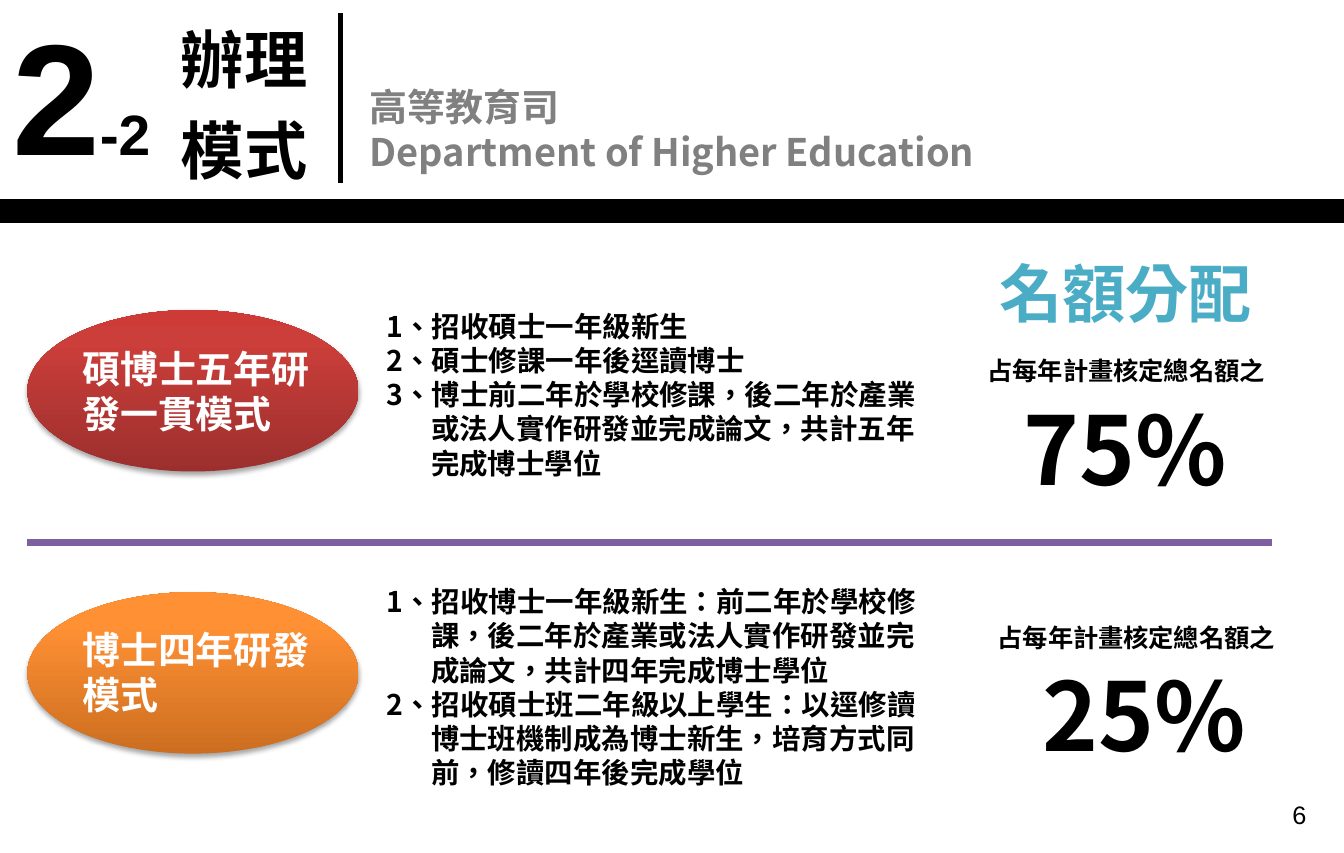
"""Build the slide on programme modes and their quota shares."""

import dataclasses
import typing

import lxml.etree
import pptx
import pptx.dml.color
import pptx.enum.shapes
import pptx.enum.text
import pptx.oxml.ns
import pptx.util

Pt = pptx.util.Pt
qn = pptx.oxml.ns.qn
ALIGN = pptx.enum.text.PP_ALIGN
SLIDE_WIDTH = 850.39
SLIDE_HEIGHT = 540


@dataclasses.dataclass(frozen=True)
class Theme:
    latin: str = "Arial"
    chinese: str = "Noto Sans CJK SC"
    black: str = "000000"
    white: str = "FFFFFF"
    grey: str = "808080"
    accent: str = "4BACC6"
    divider: str = "7D60A0"
    numeral: float = 100
    percent: float = 60
    heading: float = 40
    section: float = 36
    caption: float = 24
    body: float = 18
    small: float = 16
    line_height: float = 1.2


THEME = Theme()


@dataclasses.dataclass(frozen=True)
class Box:
    left: float
    top: float
    width: float
    height: float

    def lengths(self) -> dict[str, int]:
        return {name: Pt(value) for name, value in dataclasses.asdict(self).items()}


@dataclasses.dataclass(frozen=True)
class Style:
    size: float
    color: str = THEME.black
    font: str = THEME.chinese
    bold: bool = True
    align: ALIGN = ALIGN.LEFT
    hanging: float = 0
    outlined: bool = False


@dataclasses.dataclass(frozen=True)
class Rule:
    start: tuple[float, float]
    end: tuple[float, float]
    color: str
    width: float


@dataclasses.dataclass(frozen=True)
class Mode:
    caption: str
    points: tuple[str, ...]
    percent: str
    gradient: tuple[tuple[int, str], ...]
    ellipse_top: float
    caption_top: float
    points_box: Box
    quota_top: float
    label_left: float
    percent_left: float


MODES = (
    Mode("碩博士五年研發一貫模式",
         ("1、招收碩士一年級新生",
          "2、碩士修課一年後逕讀博士",
          "3、博士前二年於學校修課，後二年於產業或法人實作研發並完成論文，共計五年完成博士學位"),
         "75%", ((0, "9C2F2D"), (80, "CB3E3A"), (100, "CE3B37")),
         196.3, 215.1, Box(237.6, 192.2, 357.8, 116.6), 221.5, 617.8, 612),
    Mode("博士四年研發模式",
         ("1、招收博士一年級新生：前二年於學校修課，後二年於產業或法人實作研發並完成論文，共計四年完成博士學位",
          "2、招收碩士班二年級以上學生：以逕修讀博士班機制成為博士新生，培育方式同前，修讀四年後完成學位"),
         "25%", ((0, "CC6E20"), (80, "FF9034"), (100, "FF9136")),
         374.9, 392.9, Box(237.6, 366.4, 357.8, 138.2), 390.2, 624.2, 624.2),
)

RULES = (
    Rule((0, 133.6), (SLIDE_WIDTH, 133.6), THEME.black, 15),
    Rule((215.3, 8.1), (215.3, 116.1), THEME.black, 3),
    Rule((17.3, 343.2), (805, 343.2), THEME.divider, 4.5),
)


def apply_format(target: typing.Any, values: dict[str, typing.Any]) -> None:
    for name, value in values.items():
        setattr(target, name, value)


def rgb(color: str) -> pptx.dml.color.RGBColor:
    return pptx.dml.color.RGBColor.from_string(color)


def add_xml(parent: typing.Any, tag: str, **attributes: str) -> typing.Any:
    return lxml.etree.SubElement(parent, qn(tag), attributes)


def add_run(paragraph: typing.Any, text: str, style: Style) -> None:
    run = paragraph.add_run()
    run.text = text
    apply_format(run.font, {"name": style.font, "size": Pt(style.size), "bold": style.bold})
    run.font.color.rgb = rgb(style.color)
    properties = run.font._element
    properties.set("lang", "zh-TW")
    add_xml(properties, "a:ea", typeface=THEME.chinese)
    if style.outlined:
        outline = add_xml(properties, "a:ln", w=str(Pt(0.75)))
        add_xml(add_xml(outline, "a:solidFill"), "a:srgbClr", val=THEME.white)
        properties.insert(0, outline)


def write_text(shape: typing.Any, box: Box, lines: tuple[str, ...], style: Style) -> None:
    apply_format(shape, box.lengths())
    frame = shape.text_frame
    apply_format(frame, {
        "word_wrap": True,
        "auto_size": pptx.enum.text.MSO_AUTO_SIZE.NONE,
        "vertical_anchor": pptx.enum.text.MSO_ANCHOR.TOP,
        "margin_left": Pt(7.2), "margin_right": Pt(7.2),
        "margin_top": Pt(3.6), "margin_bottom": Pt(3.6),
    })
    for index, line in enumerate(lines):
        paragraph = frame.add_paragraph() if index else frame.paragraphs[0]
        apply_format(paragraph, {
            "alignment": style.align, "line_spacing": Pt(THEME.line_height * style.size),
            "space_before": Pt(0), "space_after": Pt(0),
        })
        if style.hanging:
            indent = Pt(style.hanging)
            properties = paragraph._p.get_or_add_pPr()
            properties.set("marL", str(indent))
            properties.set("indent", str(-indent))
        add_run(paragraph, line, style)


def add_text(slide: typing.Any, box: Box, lines: tuple[str, ...], style: Style) -> None:
    write_text(slide.shapes.add_textbox(**box.lengths()), box, lines, style)


def add_rule(slide: typing.Any, rule: Rule) -> None:
    points = [Pt(value) for value in (*rule.start, *rule.end)]
    connector = slide.shapes.add_connector(pptx.enum.shapes.MSO_CONNECTOR.STRAIGHT, *points)
    connector.line.color.rgb = rgb(rule.color)
    connector.line.width = Pt(rule.width)
    add_xml(connector._element.spPr, "a:effectLst")


def add_section_table(slide: typing.Any) -> None:
    table = slide.shapes.add_table(1, 2, **Box(0.4, 0.4, 213.8, 127.4).lengths()).table
    apply_format(table, {"first_row": False, "horz_banding": False})
    numeral = Style(THEME.numeral, font=THEME.latin)
    section = dataclasses.replace(numeral, size=THEME.section)
    heading = dataclasses.replace(numeral, size=THEME.heading)
    contents = ((("2", numeral), ("-2", section)), (("辦理模式", heading),))
    for cell, runs in zip(table.iter_cells(), contents):
        cell.fill.background()
        cell.vertical_anchor = pptx.enum.text.MSO_ANCHOR.MIDDLE
        for text, style in runs:
            add_run(cell.text_frame.paragraphs[0], text, style)


def add_ellipse(slide: typing.Any, mode: Mode) -> None:
    box = Box(17.3, mode.ellipse_top, 209.5, 102.2)
    shape = slide.shapes.add_shape(pptx.enum.shapes.MSO_SHAPE.OVAL, **box.lengths())
    shape.line.fill.background()
    shape.fill.gradient()
    shape.fill.gradient_angle = 90
    stops = shape._element.spPr.find(".//" + qn("a:gsLst"))
    stops.clear()
    for position, color in mode.gradient:
        add_xml(add_xml(stops, "a:gs", pos=str(position * 1000)), "a:srgbClr", val=color)
    shape.shadow.inherit = False
    shadow = add_xml(shape._element.spPr.find(qn("a:effectLst")), "a:outerShdw",
                     blurRad=str(Pt(3.1)), dist=str(Pt(1.8)), dir="5400000", rotWithShape="0")
    add_xml(add_xml(shadow, "a:srgbClr", val=THEME.black), "a:alpha", val="35000")


def add_mode(slide: typing.Any, mode: Mode) -> None:
    add_ellipse(slide, mode)
    add_text(slide, Box(44.9, mode.caption_top, 164.9, 65.5), (mode.caption,),
             Style(THEME.caption, THEME.white))
    add_text(slide, mode.points_box, mode.points, Style(THEME.body, hanging=28.1))
    add_text(slide, Box(mode.label_left, mode.quota_top, 205.9, 26.6),
             ("占每年計畫核定總名額之",), Style(THEME.small))
    add_text(slide, Box(mode.percent_left, mode.quota_top + 22.3, 199.4, 79.9),
             (mode.percent,), Style(THEME.percent, align=ALIGN.CENTER))


def main() -> None:
    presentation = pptx.Presentation()
    apply_format(presentation, {"slide_width": Pt(SLIDE_WIDTH), "slide_height": Pt(SLIDE_HEIGHT)})
    slide = presentation.slides.add_slide(presentation.slide_layouts[5])
    write_text(slide.shapes.title, Box(226.8, 49, 425.5, 65.5),
               ("高等教育司", "Department of Higher Education"), Style(THEME.caption, THEME.grey))
    add_section_table(slide)
    for rule in RULES:
        add_rule(slide, rule)
    for mode in MODES:
        add_mode(slide, mode)
    add_text(slide, Box(618.5, 157.7, 187.2, 55.4), ("名額分配",),
             Style(THEME.heading, THEME.accent, align=ALIGN.CENTER, outlined=True))
    add_text(slide, Box(635, 502.4, 198.7, 37.4), ("6",),
             Style(THEME.small, font=THEME.latin, bold=False, align=ALIGN.RIGHT))
    presentation.save("out.pptx")


if __name__ == "__main__":
    main()
